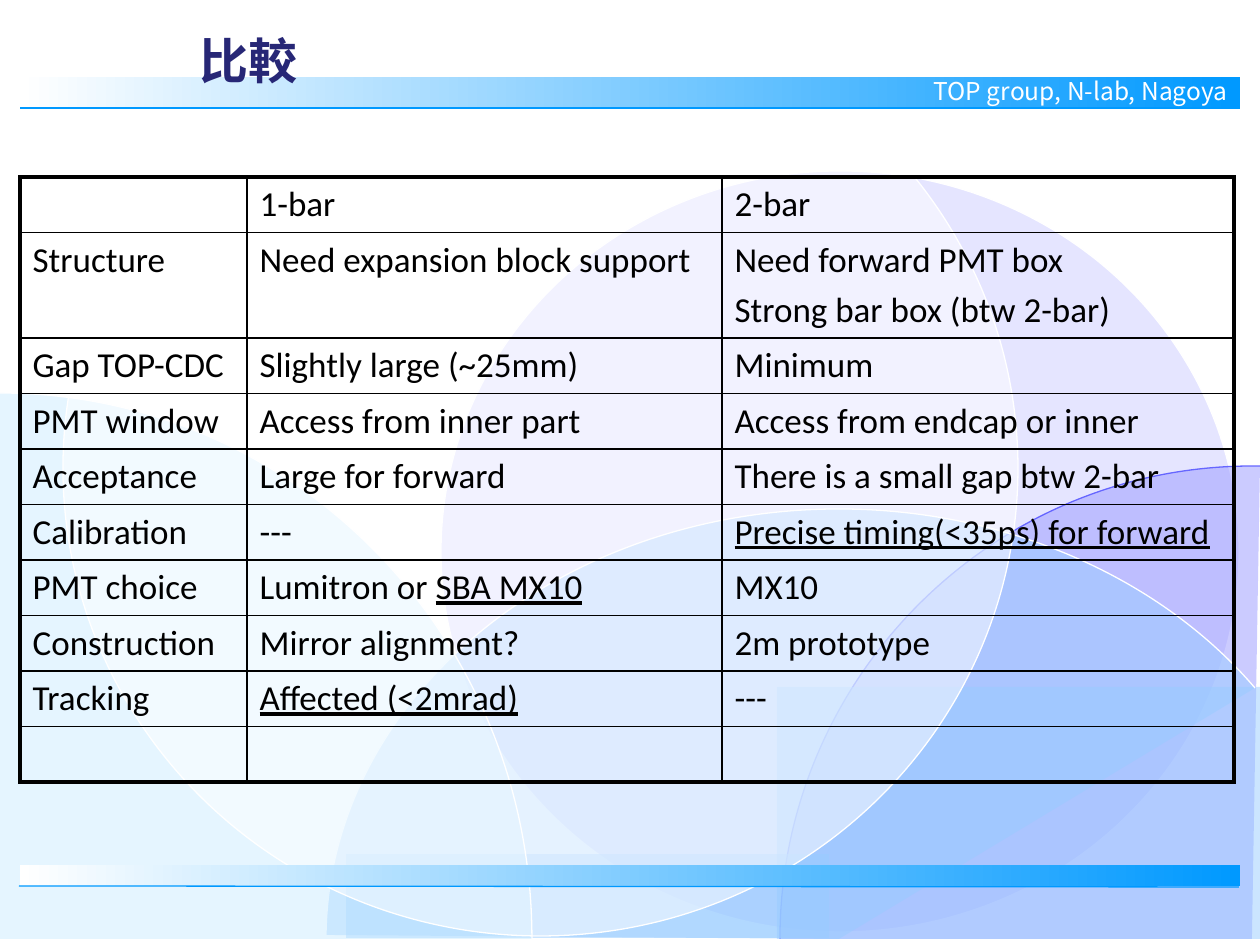
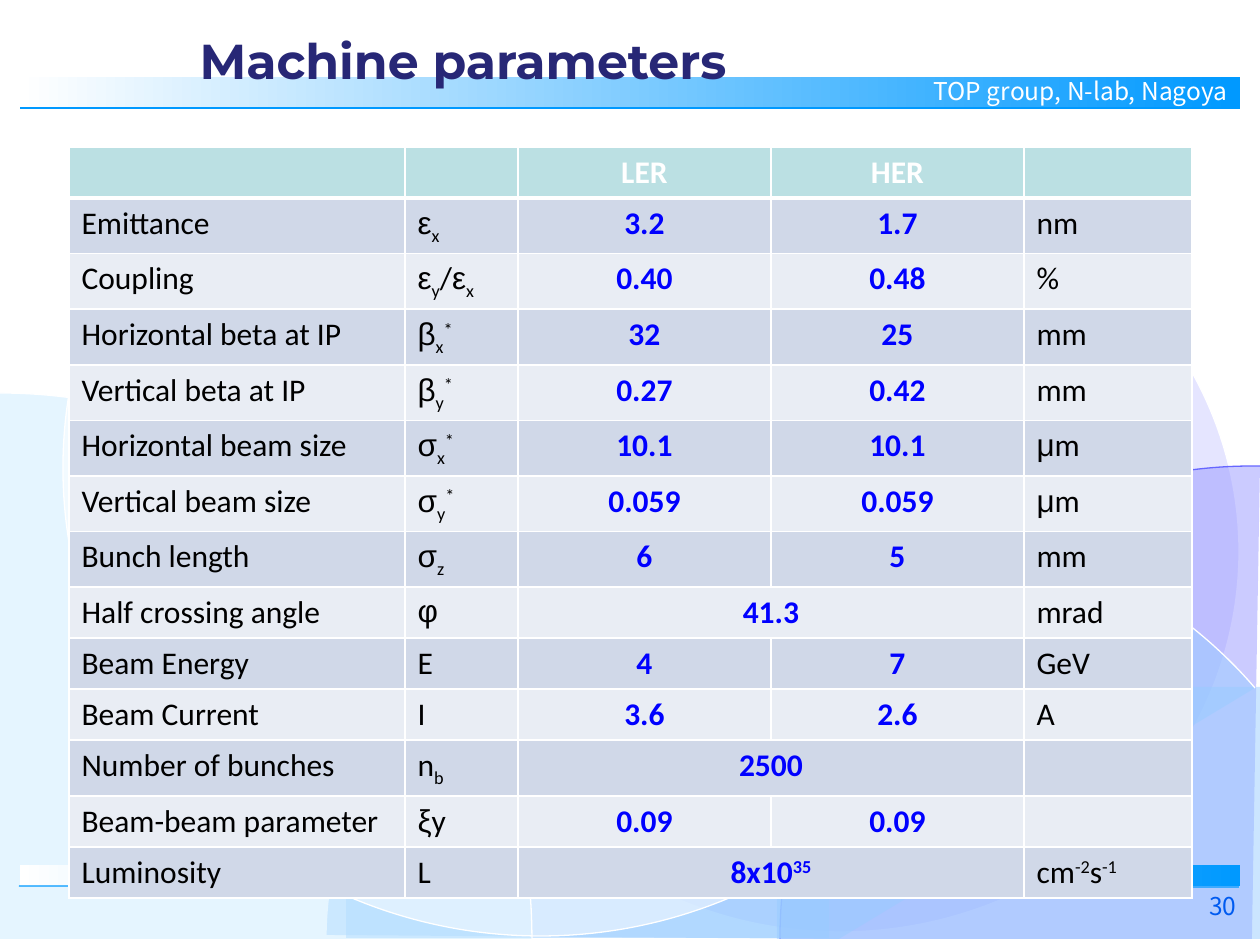
"""Build two detector slides, a design comparison and a machine parameter table, on one shared layout."""
from copy import deepcopy
from dataclasses import dataclass

from lxml import etree
from pptx import Presentation
from pptx.dml.color import RGBColor
from pptx.enum.shapes import MSO_CONNECTOR, MSO_SHAPE
from pptx.enum.text import MSO_ANCHOR, MSO_AUTO_SIZE, PP_ALIGN
from pptx.oxml.ns import qn
from pptx.util import Emu, Pt

LEFT, CENTER, RIGHT = PP_ALIGN.LEFT, PP_ALIGN.CENTER, PP_ALIGN.RIGHT
MIDDLE, NO_AUTOFIT = MSO_ANCHOR.MIDDLE, MSO_AUTO_SIZE.NONE
ELLIPSE, RECTANGLE = MSO_SHAPE.OVAL, MSO_SHAPE.RECTANGLE
STRAIGHT = MSO_CONNECTOR.STRAIGHT
TITLE_ONLY = 5
EMU_PER_PX = 914400 / 126


@dataclass(frozen=True)
class Theme:
    white: str = "FFFFFF"
    black: str = "000000"
    title: str = "272776"
    band: str = "0099FF"
    number: str = "005BF0"
    value: str = "0000FF"
    header: str = "BBE0E3"
    stripes: tuple = ("D0D8E8", "E9EDF4")
    lavender: str = "CCCCFF"
    violet: str = "9999FF"
    violet_edge: str = "6666FF"
    sky: str = "99CCFF"
    ice: str = "CCECFF"
    body_font: str = "Calibri"
    greek_font: str = "Arial"
    label_font: str = "Noto Sans CJK JP"
    title_size: int = 28
    comparison_size: int = 20
    parameter_size: int = 18
    label_size: int = 14
    hairline: float = 0.75
    grid: float = 1
    frame: float = 2.25
    header_rule: float = 3


THEME = Theme()
GREEK = "εβσμφξ"


def sub(text):
    return text, "sub"


def sup(text):
    return text, "sup"


def underlined(text):
    return text, "underline"


SLIDE_SIZE = (1260, 945)
TITLE_BOX = (187, 20, 1053, 79)
NUMBER_BOX = (987, 890, 262, 63)
GROUP_LABEL = "TOP group, N-lab, Nagoya"

BACKDROP = [
    (ELLIPSE, (441, 171, 798, 761), THEME.lavender, THEME.white),
    ("curve", [(1260, 466), (1258, 466), (1254, 466), (1252, 466),
               (992, 466), (780, 678), (780, 939), (1252, 939)],
     THEME.violet, THEME.violet_edge),
    (RECTANGLE, (777, 687, 483, 252), THEME.sky, None),
    (RECTANGLE, (346, 854, 483, 84), THEME.sky, None),
    ("curve", [(326, 935), (329, 699), (558, 509), (839, 509),
               (1004, 509), (1159, 576), (1255, 688), (839, 939)],
     THEME.sky, THEME.white),
    ("curve", [(0, 393), (294, 393), (532, 636), (532, 939), (0, 939)],
     THEME.ice, THEME.white),
    (ELLIPSE, (63, 0, 955, 936), THEME.white, THEME.white),
]
BANDS = [
    ((20, 77, 1220, 32), GROUP_LABEL, (1240, 108, 20, 108)),
    ((20, 865, 1220, 21), "", (1239, 887, 19, 886)),
]

COMPARISON_PLACE = (20, 177)
COMPARISON_COLUMNS = (227, 475, 512)
COMPARISON_ROW, COMPARISON_TALL_ROW = 55, 105
COMPARISON = [
    ("", "1-bar", "2-bar"),
    ("Structure", "Need expansion block support",
     ["Need forward PMT box", "Strong bar box (btw 2-bar)"]),
    ("Gap TOP-CDC", "Slightly large (~25mm)", "Minimum"),
    ("PMT window", "Access from inner part", "Access from endcap or inner"),
    ("Acceptance", "Large for forward", "There is a small gap btw 2-bar"),
    ("Calibration", "---", (underlined("Precise timing(<35ps) for forward"),)),
    ("PMT choice", ("Lumitron or ", underlined("SBA MX10")), "MX10"),
    ("Construction", "Mirror alignment?", "2m prototype"),
    ("Tracking", (underlined("Affected (<2mrad)"),), "---"),
    ("", "", ""),
]

PARAMETERS_PLACE = (69, 147)
PARAMETERS_COLUMNS = (336, 113, 253, 253, 168)
PARAMETERS_ROW = 51
VALUE_COLUMNS = (2, 3)
MICRON = ("μ", "m")
PARAMETERS = [
    ("", "", "LER", "HER", ""),
    ("Emittance", ("ε", sub("x")), "3.2", "1.7", "nm"),
    ("Coupling", ("ε", sub("y"), "/", "ε", sub("x")), "0.40", "0.48", "%"),
    ("Horizontal beta at IP", ("β", sub("x"), sup("*")), "32", "25", "mm"),
    ("Vertical beta at IP", ("β", sub("y"), sup("*")), "0.27", "0.42", "mm"),
    ("Horizontal beam size", ("σ", sub("x"), sup("*")), "10.1", "10.1", MICRON),
    ("Vertical beam size", ("σ", sub("y"), sup("*")), "0.059", "0.059", MICRON),
    ("Bunch length", ("σ", sub("z")), "6", "5", "mm"),
    ("Half crossing angle", "φ", "41.3", None, "mrad"),
    ("Beam Energy", "E", "4", "7", "GeV"),
    ("Beam Current", "I", "3.6", "2.6", "A"),
    ("Number of bunches", ("n", sub("b")), "2500", None, ""),
    ("Beam-beam parameter", ("ξ", "y"), "0.09", "0.09", ""),
    ("Luminosity", "L", ("8x10", sup("35")), None,
     ("cm", sup("-2"), "s", sup("-1"))),
]


def px(*lengths):
    return [Emu(round(length * EMU_PER_PX)) for length in lengths]


def color(code):
    return RGBColor.from_string(code)


def set_font(paragraph, name, size, code, bold=False):
    font = paragraph.font
    font.name, font.size, font.bold = name, Pt(size), bold
    font.color.rgb = color(code)


def write_label(text_frame, text, code):
    text_frame.word_wrap = True
    paragraph = text_frame.paragraphs[0]
    paragraph.text, paragraph.alignment = text, RIGHT
    paragraph.line_spacing = 0.83
    set_font(paragraph, THEME.label_font, THEME.label_size, code)


def paint(shape, fill, line):
    shape.shadow.inherit = False
    shape.fill.solid()
    shape.fill.fore_color.rgb = color(fill)
    tint = shape.element.spPr.find(qn("a:solidFill"))[0]
    etree.SubElement(tint, qn("a:alpha"), val="50000")
    if line:
        shape.line.color.rgb = color(line)
        shape.line.width = Pt(THEME.hairline)
    else:
        shape.line.fill.background()


def add_curve(shapes, points):
    start, *rest = [px(*point) for point in points]
    builder = shapes.build_freeform(*start, scale=1.0)
    builder.add_line_segments(rest, close=True)
    shape = builder.convert_to_shape()
    sector = next(shape.element.iter(qn("a:path")))
    *controls, corner = sector.findall(qn("a:lnTo"))
    for first in range(0, len(controls), 3):
        bend = etree.Element(qn("a:cubicBezTo"))
        controls[first].addprevious(bend)
        for control in controls[first:first + 3]:
            bend.append(control[0])
            sector.remove(control)
    arc = deepcopy(sector)
    for straight_part in arc[-2:]:
        arc.remove(straight_part)
    arc.set("fill", "none")
    sector.set("stroke", "0")
    sector.addprevious(arc)
    return shape


def add_backdrop(shapes):
    for kind, geometry, fill, line in BACKDROP:
        shape = (add_curve(shapes, geometry) if kind == "curve"
                 else shapes.add_shape(kind, *px(*geometry)))
        paint(shape, fill, line)


def add_bands(shapes):
    for box, label, ends in BANDS:
        band = shapes.add_shape(RECTANGLE, *px(*box))
        band.shadow.inherit = False
        band.line.fill.background()
        band.fill.gradient()
        band.fill.gradient_angle = 0
        for stop, code in zip(band.fill.gradient_stops, (THEME.white, THEME.band)):
            stop.color.rgb = color(code)
        if label:
            band.text_frame.vertical_anchor = MIDDLE
            write_label(band.text_frame, label, THEME.white)
        rule = shapes.add_connector(STRAIGHT, *px(*ends))
        rule.line.color.rgb = color(THEME.band)
        rule.line.width = Pt(THEME.hairline)
        etree.SubElement(rule.element.spPr, qn("a:effectLst"))


def furnish_layout(layout, slide):
    for placeholder in list(layout.placeholders)[1:]:
        layout.shapes.element.remove(placeholder.element)
    add_backdrop(slide.shapes)
    add_bands(slide.shapes)
    for shape in slide.shapes:
        if not shape.is_placeholder:
            layout.shapes.element.append(shape.element)


def set_title(slide, text, font_name):
    title = slide.shapes.title
    title.left, title.top, title.width, title.height = px(*TITLE_BOX)
    frame = title.text_frame
    frame.text, frame.vertical_anchor = text, MIDDLE
    frame.auto_size = NO_AUTOFIT
    frame.paragraphs[0].alignment = LEFT
    set_font(frame.paragraphs[0], font_name, THEME.title_size, THEME.title, True)


def add_grid(slide, place, columns, rows):
    box = px(*place, sum(columns), sum(rows))
    table = slide.shapes.add_table(len(rows), len(columns), *box).table
    table.first_row = table.horz_banding = False
    for column, width in zip(table.columns, px(*columns)):
        column.width = width
    for row, height in zip(table.rows, px(*rows)):
        row.height = height
    return table


def set_borders(cell, code, widths):
    properties = cell._tc.get_or_add_tcPr()
    for side, width in zip("LRTB", widths):
        line = etree.SubElement(properties, qn(f"a:ln{side}"), w=str(Pt(width)))
        fill = etree.SubElement(line, qn("a:solidFill"))
        etree.SubElement(fill, qn("a:srgbClr"), val=code)


def write_runs(paragraph, runs):
    for item in (runs,) if isinstance(runs, str) else runs:
        text, style = (item, None) if isinstance(item, str) else item
        run = paragraph.add_run()
        run.text = text
        if text in GREEK:
            run.font.name = THEME.greek_font
        if style == "underline":
            run.font.underline = True
        elif style:
            baseline = {"sub": "-25000", "sup": "30000"}[style]
            run._r.get_or_add_rPr().set("baseline", baseline)


def write_cell(cell, content, size, code, bold=False, alignment=LEFT):
    frame = cell.text_frame
    for index, runs in enumerate(content if isinstance(content, list) else [content]):
        paragraph = frame.add_paragraph() if index else frame.paragraphs[0]
        if index:
            paragraph.space_before = Pt(size * 0.2)
        paragraph.alignment = alignment
        set_font(paragraph, THEME.body_font, size, code, bold)
        if runs:
            write_runs(paragraph, runs)


def add_comparison(slide):
    heights = [COMPARISON_TALL_ROW if any(isinstance(content, list) for content in row)
               else COMPARISON_ROW for row in COMPARISON]
    table = add_grid(slide, COMPARISON_PLACE, COMPARISON_COLUMNS, heights)
    last_row, last_column = len(heights) - 1, len(COMPARISON_COLUMNS) - 1
    for r, row in enumerate(COMPARISON):
        for c, content in enumerate(row):
            cell = table.cell(r, c)
            on_frame = (c == 0, c == last_column, r == 0, r == last_row)
            set_borders(cell, THEME.black,
                        [THEME.frame if edge else THEME.grid for edge in on_frame])
            cell.fill.background()
            write_cell(cell, content, THEME.comparison_size, THEME.black)


def add_parameters(slide):
    table = add_grid(slide, PARAMETERS_PLACE, PARAMETERS_COLUMNS,
                     [PARAMETERS_ROW] * len(PARAMETERS))
    for r, row in enumerate(PARAMETERS):
        for c, content in enumerate(row):
            cell = table.cell(r, c)
            top, bottom = (THEME.header_rule if r == edge else THEME.grid for edge in (1, 0))
            set_borders(cell, THEME.white, (THEME.grid, THEME.grid, top, bottom))
            cell.fill.solid()
            cell.fill.fore_color.rgb = color(THEME.stripes[(r - 1) % 2] if r else THEME.header)
            if content is None:
                table.cell(r, c - 1).merge(cell)
            elif c in VALUE_COLUMNS:
                write_cell(cell, content, THEME.parameter_size,
                           THEME.value if r else THEME.white, True, CENTER)
            else:
                write_cell(cell, content, THEME.parameter_size, THEME.black)


def main():
    presentation = Presentation()
    presentation.slide_width, presentation.slide_height = px(*SLIDE_SIZE)
    layout = presentation.slide_layouts[TITLE_ONLY]
    comparison, parameters = [presentation.slides.add_slide(layout) for _ in range(2)]
    furnish_layout(layout, comparison)
    set_title(comparison, "比較", "Arial")
    add_comparison(comparison)
    set_title(parameters, "Machine parameters", "Montserrat")
    number = parameters.shapes.add_textbox(*px(*NUMBER_BOX))
    write_label(number.text_frame, "30", THEME.number)
    add_parameters(parameters)
    presentation.save("out.pptx")


if __name__ == "__main__":
    main()
